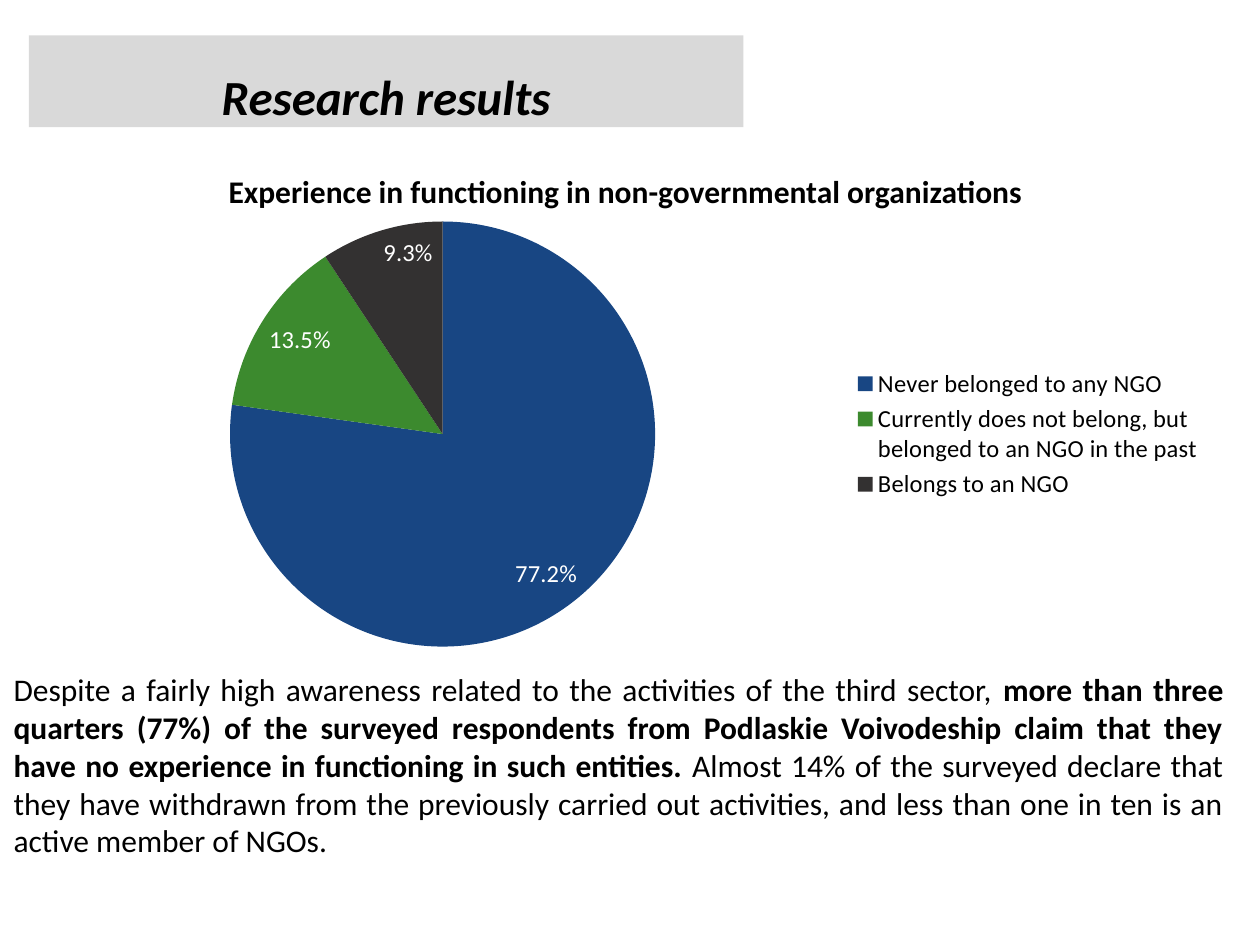
"""Build the survey results slide with a pie chart and a commentary."""
import pptx
import pptx.chart.data
import pptx.dml.color
import pptx.enum.chart
import pptx.enum.text
import pptx.util

Inches = pptx.util.Inches
RGBColor = pptx.dml.color.RGBColor
Align = pptx.enum.text.PP_ALIGN

FONT = "Calibri"
BLACK = RGBColor(0x00, 0x00, 0x00)
WHITE = RGBColor(0xFF, 0xFF, 0xFF)
GREY = RGBColor(0xD9, 0xD9, 0xD9)
BLUE = RGBColor(0x18, 0x46, 0x83)
GREEN = RGBColor(0x3C, 0x8A, 0x2E)
CHARCOAL = RGBColor(0x33, 0x31, 0x31)

TITLE = "Research results"
CHART_TITLE = "Experience in functioning in non-governmental organizations"
EXPERIENCE = [
    ("Never belonged to any NGO", 0.772, BLUE),
    ("Currently does not belong, but belonged to an NGO in the past", 0.135, GREEN),
    ("Belongs to an NGO", 0.093, CHARCOAL),
]
COMMENTARY = [
    ("Despite a fairly high awareness related to the activities of the third sector, ", False),
    ("more than three quarters (77%) of the surveyed respondents from Podlaskie Voivodeship "
     "claim that they have no experience in functioning in such entities. ", True),
    ("Almost 14% of the surveyed declare that they have withdrawn from the previously carried "
     "out activities, and less than one in ten is an active member of NGOs.", False),
]
TITLE_AREA = (0.23, 0.28, 5.67, 0.73)
CHART_TITLE_AREA = (0.28, 1.32, 9.37, 0.4)
CHART_AREA = (0.28, 1.62, 9.37, 3.65)
COMMENTARY_AREA = (0.01, 5.27, 9.8, 1.62)


def format_font(font, size, color=BLACK, bold=False, italic=False):
    font.name = FONT
    font.size = pptx.util.Pt(size)
    font.color.rgb = color
    font.bold = bold
    font.italic = italic


def write_text(box, spans, size=18, align=Align.CENTER, italic=False, spacing=None,
               anchor=pptx.enum.text.MSO_ANCHOR.TOP):
    frame = box.text_frame
    frame.word_wrap = True
    frame.auto_size = pptx.enum.text.MSO_AUTO_SIZE.NONE
    frame.vertical_anchor = anchor
    para = frame.paragraphs[0]
    para.alignment = align
    para.line_spacing = spacing
    for text, bold in spans:
        span = para.add_run()
        span.text = text
        format_font(span.font, size, bold=bold, italic=italic)


def add_text(page, area, spans, **text_format):
    box = page.shapes.add_textbox(*map(Inches, area))
    write_text(box, spans, **text_format)


def add_title(page):
    title = page.shapes.title
    title.left, title.top, title.width, title.height = map(Inches, TITLE_AREA)
    title.fill.solid()
    title.fill.fore_color.rgb = GREY
    write_text(title, [(TITLE, True)], size=28, italic=True, spacing=1.5,
               anchor=pptx.enum.text.MSO_ANCHOR.MIDDLE)


def add_pie(page):
    names, shares, colors = zip(*EXPERIENCE)
    data = pptx.chart.data.CategoryChartData(number_format="0.0%")
    data.categories = names
    data.add_series("Series 1", shares)
    chart = page.shapes.add_chart(
        pptx.enum.chart.XL_CHART_TYPE.PIE, *map(Inches, CHART_AREA), data).chart
    format_font(chart.font, 14)
    chart.has_title = False
    chart.has_legend = True
    chart.legend.position = pptx.enum.chart.XL_LEGEND_POSITION.RIGHT
    chart.legend.include_in_layout = False
    format_font(chart.legend.font, 14)

    plot = chart.plots[0]
    plot.vary_by_categories = True
    for index, color in enumerate(colors):
        fill = plot.series[0].points[index].format.fill
        fill.solid()
        fill.fore_color.rgb = color

    plot.has_data_labels = True
    labels = plot.data_labels
    labels.show_value = True
    labels.show_percentage = False
    labels.number_format = "0.0%"
    labels.number_format_is_linked = False
    labels.position = pptx.enum.chart.XL_LABEL_POSITION.INSIDE_END
    format_font(labels.font, 14, color=WHITE)


def main():
    deck = pptx.Presentation()
    deck.slide_width, deck.slide_height = Inches(10), Inches(7.5)
    page = deck.slides.add_slide(deck.slide_layouts.get_by_name("Title Only"))
    add_title(page)
    add_text(page, CHART_TITLE_AREA, [(CHART_TITLE, True)])
    add_text(page, COMMENTARY_AREA, COMMENTARY, align=Align.JUSTIFY)
    add_pie(page)
    deck.save("out.pptx")


if __name__ == "__main__":
    main()
